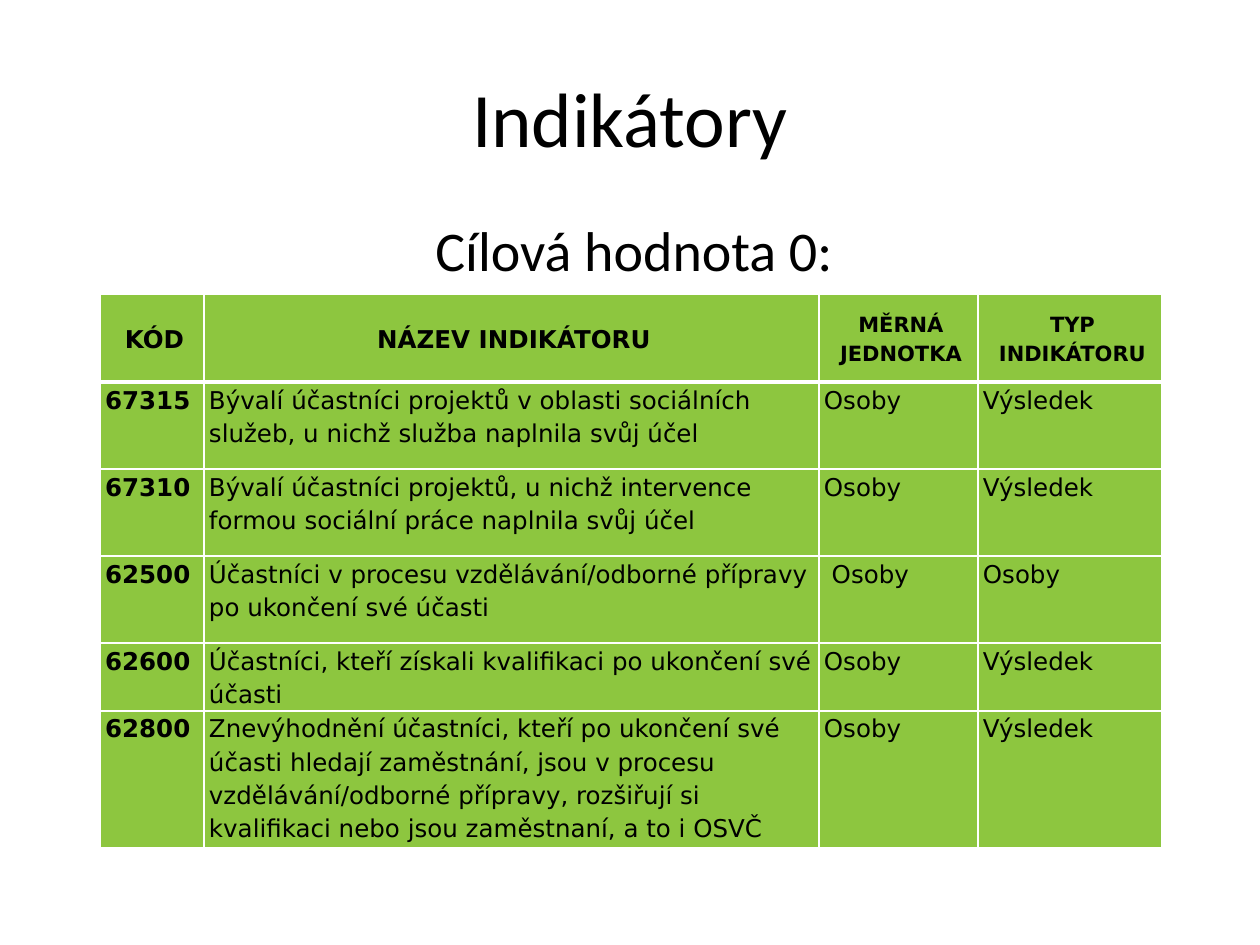
from lxml.etree import SubElement
from pptx import Presentation
from pptx.dml.color import RGBColor
from pptx.enum.text import MSO_ANCHOR as Anchor, MSO_AUTO_SIZE as AutoSize, PP_ALIGN as Align
from pptx.oxml.ns import qn
from pptx.util import Emu, Pt

PX_PER_INCH = 126
GREEN, WHITE, BLACK = "8DC63F", "FFFFFF", "000000"
HEADING_FONT, TABLE_FONT = "Calibri", "DejaVu Sans"

COLUMN_WIDTHS = [104, 615, 159, 184]
ROW_HEIGHTS = [88, 87, 87, 87, 68, 137]
HEADER = ["KÓD", "NÁZEV INDIKÁTORU", "MĚRNÁ JEDNOTKA", "TYP INDIKÁTORU"]
HEADER_SIZES = [14, 14, 12, 12]
INDICATORS = [
    ["67315", "Bývalí účastníci projektů v oblasti sociálních služeb, "
     "u nichž služba naplnila svůj účel", "Osoby", "Výsledek"],
    ["67310", "Bývalí účastníci projektů, u nichž intervence formou "
     "sociální práce naplnila svůj účel", "Osoby", "Výsledek"],
    ["62500", "Účastníci v procesu vzdělávání/odborné přípravy "
     "po ukončení své účasti", " Osoby", "Osoby"],
    ["62600", "Účastníci, kteří získali kvalifikaci po ukončení své účasti",
     "Osoby", "Výsledek"],
    ["62800", "Znevýhodnění účastníci, kteří po ukončení své účasti hledají "
     "zaměstnání, jsou v procesu vzdělávání/odborné přípravy, rozšiřují si "
     "kvalifikaci nebo jsou zaměstnaní, a to i OSVČ", "Osoby", "Výsledek"],
]


def px(length):
    return Emu(round(length * 914400 / PX_PER_INCH))


def color(value):
    return RGBColor.from_string(value)


def style(para, font_name, size, bold=False, align=None):
    para.alignment = align
    font = para.font
    font.name, font.size, font.bold = font_name, Pt(size), bold
    font.color.rgb = color(BLACK)


def add_title(page, box):
    title = page.shapes.title
    title.left, title.top, title.width, title.height = map(px, box)
    title.text_frame.text = "Indikátory"
    title.text_frame.vertical_anchor = Anchor.MIDDLE
    style(title.text_frame.paragraphs[0], HEADING_FONT, 44, align=Align.CENTER)


def add_subtitle(page, box):
    frame = page.shapes.add_textbox(*map(px, box)).text_frame
    frame.word_wrap = False
    frame.auto_size = AutoSize.SHAPE_TO_FIT_TEXT
    frame.text = "Cílová hodnota 0:"
    style(frame.paragraphs[0], HEADING_FONT, 32)


def set_borders(cell, **widths):
    """Draw white cell edges; the lines must come before the fill."""
    props = cell._tc.get_or_add_tcPr()
    for index, side in enumerate("LRTB"):
        line = SubElement(props, qn(f"a:ln{side}"), w=str(Pt(widths.get(side, 1))))
        fill = SubElement(line, qn("a:solidFill"))
        SubElement(fill, qn("a:srgbClr"), val=WHITE)
        props.insert(index, line)


def fill_cell(cell, text, size, bold, is_header):
    cell.fill.solid()
    cell.fill.fore_color.rgb = color(GREEN)
    cell.margin_left = cell.margin_right = px(9 if is_header else 0)
    cell.margin_top = cell.margin_bottom = 0
    cell.vertical_anchor = Anchor.MIDDLE if is_header else Anchor.TOP
    cell.text = text
    para = cell.text_frame.paragraphs[0]
    style(para, TABLE_FONT, size, bold, Align.CENTER if is_header else Align.LEFT)
    para.line_spacing = 1.15
    para.space_before = para.space_after = Pt(3)
    indent = para._p.get_or_add_pPr()
    indent.set("marL", str(px(5)))
    indent.set("indent", "0")


def add_indicator_table(page, left, top):
    rows = [HEADER] + INDICATORS
    table = page.shapes.add_table(
        len(rows), len(HEADER), px(left), px(top),
        px(sum(COLUMN_WIDTHS)), px(sum(ROW_HEIGHTS))).table
    for column, width in zip(table.columns, COLUMN_WIDTHS):
        column.width = px(width)
    for row, height in zip(table.rows, ROW_HEIGHTS):
        row.height = px(height)
    for r, texts in enumerate(rows):
        for c, text in enumerate(texts):
            cell = table.cell(r, c)
            is_header = r == 0
            size = HEADER_SIZES[c] if is_header else 14
            fill_cell(cell, text, size, is_header or c == 0, is_header)
            # Thick rule between the header and the first indicator
            set_borders(cell, T=3 if r == 1 else 1, B=3 if is_header else 1)


def main():
    deck = Presentation()
    deck.slide_width, deck.slide_height = px(1260), px(945)
    page = deck.slides.add_slide(deck.slide_layouts[5])  # Title Only
    add_title(page, (63, 38, 1134, 158))
    add_indicator_table(page, 100, 294)
    add_subtitle(page, (423, 209, 427, 81))
    deck.save("out.pptx")


if __name__ == "__main__":
    main()
